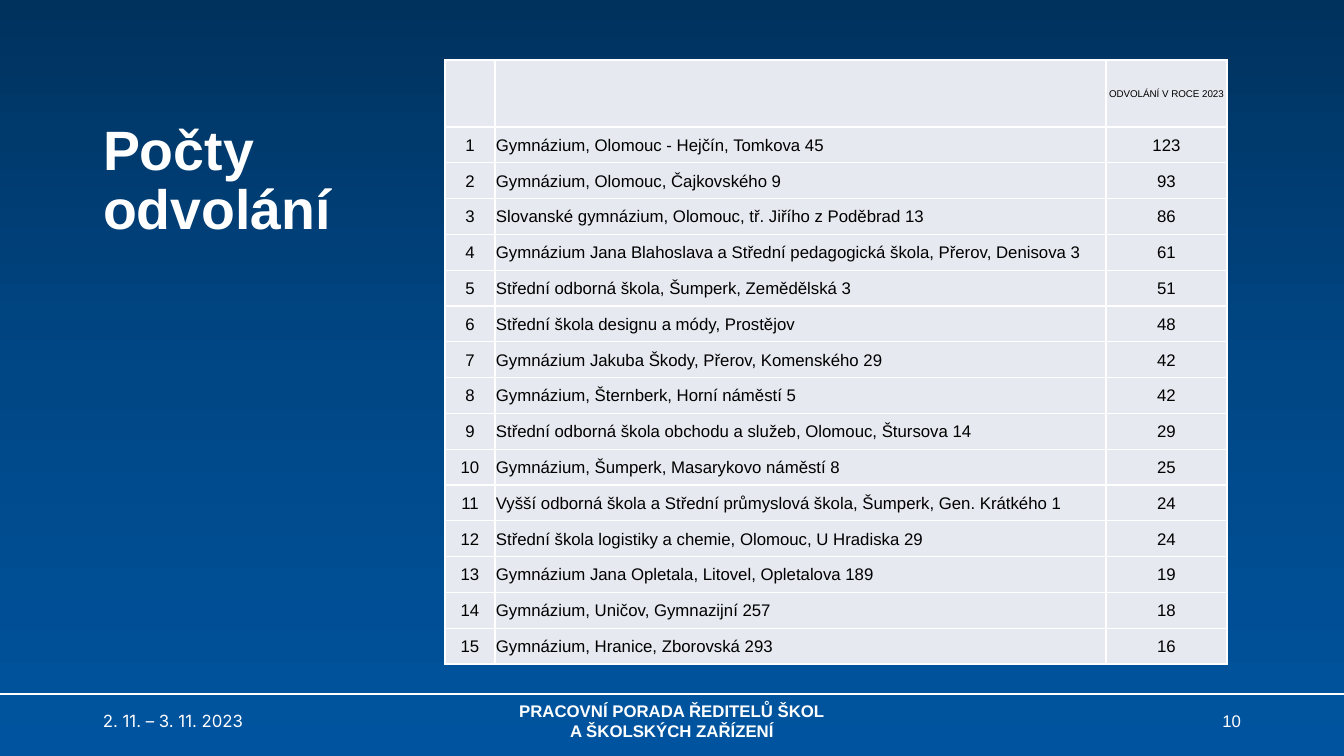
from copy import deepcopy

from lxml import etree
from pptx import Presentation
from pptx import util as u
from pptx.dml.color import RGBColor
from pptx.enum import shapes, text
from pptx.oxml.ns import qn

PX = 914400 / 100.8
WIDTH, HEIGHT = 1344, 756

WHITE = RGBColor(0xFF, 0xFF, 0xFF)
BLACK = RGBColor(0, 0, 0)
CELL = RGBColor(0xE7, 0xE9, 0xF0)
NAVY = RGBColor(0x00, 0x32, 0x5E)
MID_BLUE = RGBColor(0x00, 0x47, 0x86)
BLUE = RGBColor(0x00, 0x54, 0x9F)

LEFT, CENTER, RIGHT = (text.PP_ALIGN.LEFT, text.PP_ALIGN.CENTER, text.PP_ALIGN.RIGHT)

SCHOOLS = [
    ("Gymnázium, Olomouc - Hejčín, Tomkova 45", 123),
    ("Gymnázium, Olomouc, Čajkovského 9", 93),
    ("Slovanské gymnázium, Olomouc, tř. Jiřího z Poděbrad 13", 86),
    ("Gymnázium Jana Blahoslava a Střední pedagogická škola, Přerov, Denisova 3", 61),
    ("Střední odborná škola, Šumperk, Zemědělská 3", 51),
    ("Střední škola designu a módy, Prostějov", 48),
    ("Gymnázium Jakuba Škody, Přerov, Komenského 29", 42),
    ("Gymnázium, Šternberk, Horní náměstí 5", 42),
    ("Střední odborná škola obchodu a služeb, Olomouc, Štursova 14", 29),
    ("Gymnázium, Šumperk, Masarykovo náměstí 8", 25),
    ("Vyšší odborná škola a Střední průmyslová škola, Šumperk, Gen. Krátkého 1", 24),
    ("Střední škola logistiky a chemie, Olomouc, U Hradiska 29", 24),
    ("Gymnázium Jana Opletala, Litovel, Opletalova 189", 19),
    ("Gymnázium, Uničov, Gymnazijní 257", 18),
    ("Gymnázium, Hranice, Zborovská 293", 16),
]


def px(n):
    return u.Emu(round(n * PX))


def write(tf, words, size=12, font="Arial", color=WHITE, bold=False, align=LEFT, spacing=None):
    tf.text = words
    p = tf.paragraphs[0]
    p.alignment = align
    if spacing:
        p.line_spacing = spacing
    for r in p.runs:
        r.font.size = u.Pt(size)
        r.font.name = font
        r.font.bold = bold
        r.font.color.rgb = color


def add_background(s):
    fill = s.background.fill
    fill.gradient()
    fill.gradient_angle = 270
    first, last = fill.gradient_stops
    first.color.rgb, first.position = MID_BLUE, 0.5
    last.color.rgb, last.position = BLUE, 1
    middle = s.element.find(".//" + qn("a:gs"))
    middle.addprevious(deepcopy(middle))
    top = fill.gradient_stops[0]
    top.color.rgb, top.position = NAVY, 0


def add_title(s, x, y, w, h):
    title = s.shapes.title
    title.left, title.top, title.width, title.height = map(px, (x, y, w, h))
    tf = title.text_frame
    tf.auto_size = text.MSO_AUTO_SIZE.NONE
    tf.vertical_anchor = text.MSO_ANCHOR.MIDDLE
    write(tf, "Počty\vodvolání", size=39.6, bold=True, spacing=0.9)


def add_borders(cell):
    tc_pr = cell._tc.get_or_add_tcPr()
    for side in ("lnL", "lnR", "lnT", "lnB"):
        ln = etree.SubElement(tc_pr, qn("a:" + side), w=str(u.Pt(1)))
        solid = etree.SubElement(ln, qn("a:solidFill"))
        etree.SubElement(solid, qn("a:srgbClr"), val=str(WHITE))


def format_cell(cell, words, size, align):
    add_borders(cell)
    cell.fill.solid()
    cell.fill.fore_color.rgb = CELL
    cell.vertical_anchor = text.MSO_ANCHOR.MIDDLE
    cell.margin_left = cell.margin_right = cell.margin_top = px(1)
    cell.margin_bottom = 0
    if words:
        write(cell.text_frame, words, size=size, color=BLACK, align=align)


def add_appeals_table(s, x, y, w, h):
    rows = [("", "", "ODVOLÁNÍ V ROCE 2023")]
    rows += [(str(i), name, str(count)) for i, (name, count) in enumerate(SCHOOLS, 1)]
    table = s.shapes.add_table(len(rows), 3, px(x), px(y), px(w), px(h)).table
    number_w, count_w, header_h = 50, 121, 67
    for column, width in zip(table.columns, (number_w, w - number_w - count_w, count_w)):
        column.width = px(width)
    for i, row in enumerate(rows):
        table.rows[i].height = px((h - header_h) / len(SCHOOLS) if i else header_h)
        for j, words in enumerate(row):
            format_cell(table.cell(i, j), words, 12 if i else 7, LEFT if j == 1 else CENTER)


def add_footer(s, x, y, w, h):
    rule = s.shapes.add_connector(shapes.MSO_CONNECTOR.STRAIGHT, px(x), px(y), px(x + w), px(y))
    rule.line.color.rgb = WHITE
    rule.line.width = u.Pt(1)
    etree.SubElement(rule._element.spPr, qn("a:effectLst"))

    margin, side_w, center_w = 93, 302, 454
    parts = [
        (x + margin, side_w, "2. 11. – 3. 11. 2023", dict(font="Inter")),
        (x + (w - center_w) / 2, center_w, "PRACOVNÍ PORADA ŘEDITELŮ ŠKOL\vA ŠKOLSKÝCH ZAŘÍZENÍ",
         dict(bold=True, align=CENTER)),
        (x + w - margin - side_w, side_w, "10", dict(align=RIGHT)),
    ]
    for left, width, words, style in parts:
        tf = s.shapes.add_textbox(px(left), px(y + 7), px(width), px(h - 22)).text_frame
        tf.word_wrap = True
        tf.vertical_anchor = text.MSO_ANCHOR.MIDDLE
        write(tf, words, **style)


def main():
    prs = Presentation()
    prs.slide_width, prs.slide_height = px(WIDTH), px(HEIGHT)
    s = prs.slides.add_slide(prs.slide_layouts[5])
    add_background(s)
    add_title(s, 93, 144, 1159, 76)
    add_appeals_table(s, 445, 60, 782, 604)
    add_footer(s, 0, 694, WIDTH, HEIGHT - 694)
    prs.save("out.pptx")


if __name__ == "__main__":
    main()
